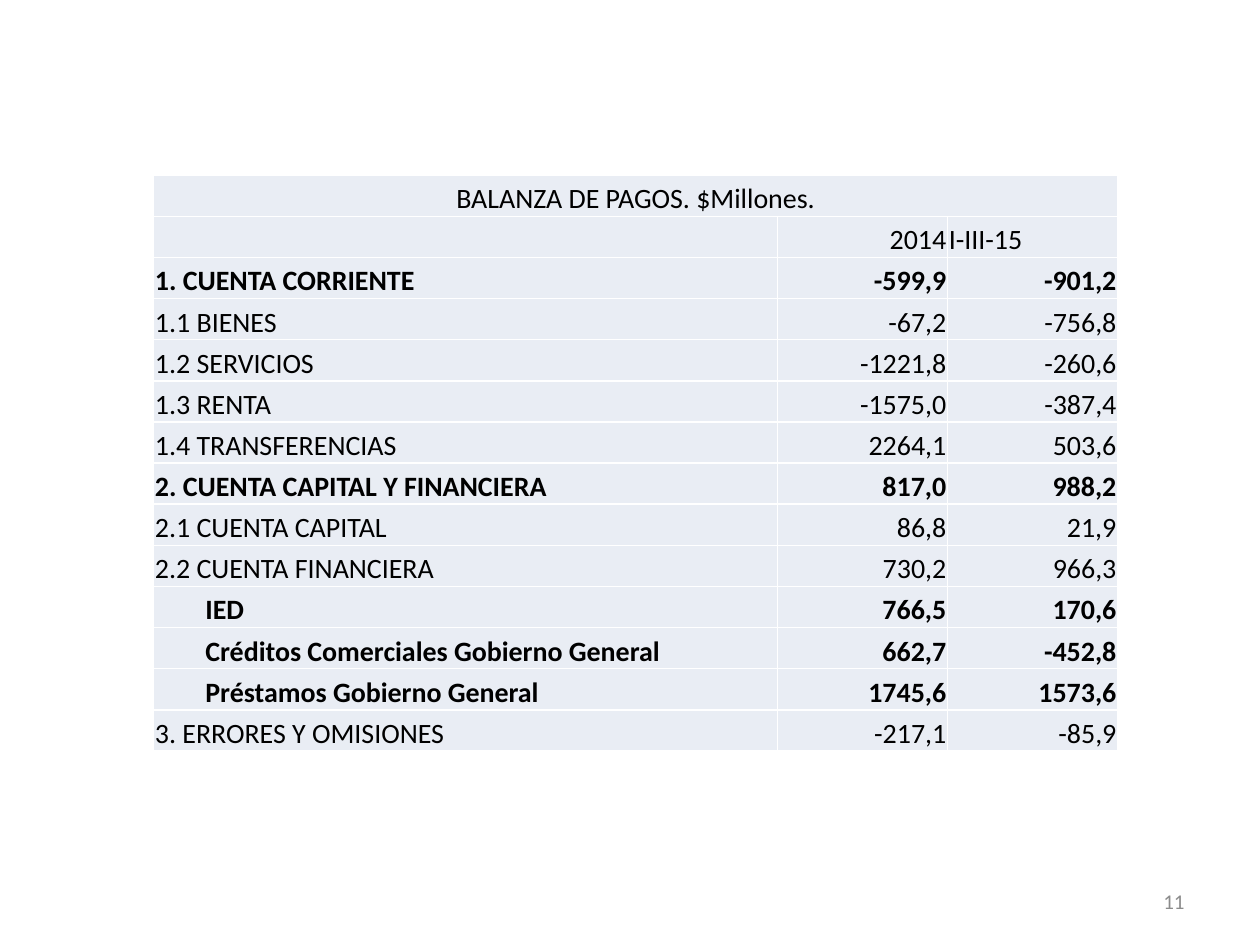
from dataclasses import dataclass

from lxml.etree import SubElement
from pptx import Presentation
from pptx.dml.color import RGBColor
from pptx.enum.text import MSO_ANCHOR, PP_ALIGN
from pptx.oxml.ns import qn
from pptx.util import Inches, Pt

SLIDE_WIDTH, SLIDE_HEIGHT = Inches(10), Inches(7.5)
BLACK = RGBColor(0x00, 0x00, 0x00)
WHITE = RGBColor(0xFF, 0xFF, 0xFF)
GREY = RGBColor(0x8C, 0x8C, 0x8C)
PALE_BLUE = RGBColor(0xE9, 0xED, 0xF4)
FONT = "Calibri"
COLUMN_WIDTHS = (4.95, 1.35, 1.35)
TABLE_HEIGHT = 4.57
CELL_MARGIN = 0.01
INDENT = 0.4


@dataclass(frozen=True)
class Entry:
    label: str
    year_2014: str
    quarters_2015: str
    bold: bool = False
    indented: bool = False


TITLE = "BALANZA DE PAGOS. $Millones."
HEADER = Entry("", "2014", "I-III-15")
ENTRIES = (
    Entry("1. CUENTA CORRIENTE", "-599,9", "-901,2", bold=True),
    Entry("1.1 BIENES", "-67,2", "-756,8"),
    Entry("1.2 SERVICIOS", "-1221,8", "-260,6"),
    Entry("1.3 RENTA", "-1575,0", "-387,4"),
    Entry("1.4 TRANSFERENCIAS", "2264,1", "503,6"),
    Entry("2. CUENTA CAPITAL Y FINANCIERA", "817,0", "988,2", bold=True),
    Entry("2.1 CUENTA CAPITAL", "86,8", "21,9"),
    Entry("2.2 CUENTA FINANCIERA", "730,2", "966,3"),
    Entry("IED", "766,5", "170,6", bold=True, indented=True),
    Entry("Créditos Comerciales Gobierno General", "662,7", "-452,8", bold=True, indented=True),
    Entry("Préstamos Gobierno General", "1745,6", "1573,6", bold=True, indented=True),
    Entry("3. ERRORES Y OMISIONES", "-217,1", "-85,9"),
)


def write(text_frame, text: str, size: int, color: RGBColor, align: PP_ALIGN, bold: bool = False) -> None:
    paragraph = text_frame.paragraphs[0]
    paragraph.alignment = align
    paragraph.font.size = Pt(size)
    if text:
        run = paragraph.add_run()
        run.text = text
        run.font.name = FONT
        run.font.size = Pt(size)
        run.font.bold = bold
        run.font.color.rgb = color


def style_cell(cell) -> None:
    """Set the margins, the white borders and the fill."""
    cell.vertical_anchor = MSO_ANCHOR.BOTTOM
    cell.margin_left = cell.margin_right = cell.margin_top = Inches(CELL_MARGIN)
    cell.margin_bottom = 0
    properties = cell._tc.get_or_add_tcPr()
    for side in ("a:lnL", "a:lnR", "a:lnT", "a:lnB"):
        line = SubElement(properties, qn(side), w=str(Pt(1)))
        SubElement(SubElement(line, qn("a:solidFill")), qn("a:srgbClr"), val=str(WHITE))
    cell.fill.solid()
    cell.fill.fore_color.rgb = PALE_BLUE


def write_entry(table, row: int, entry: Entry, last_align: PP_ALIGN = PP_ALIGN.RIGHT) -> None:
    texts = (entry.label, entry.year_2014, entry.quarters_2015)
    aligns = (PP_ALIGN.LEFT, PP_ALIGN.RIGHT, last_align)
    for column, (text, align) in enumerate(zip(texts, aligns)):
        write(table.cell(row, column).text_frame, text, 16, BLACK, align, entry.bold)
    if entry.indented:
        table.cell(row, 0).margin_left = Inches(CELL_MARGIN + INDENT)


def add_balance_table(slide) -> None:
    row_count = len(ENTRIES) + 2
    table = slide.shapes.add_table(
        row_count, len(COLUMN_WIDTHS), Inches(1.22), Inches(1.39),
        Inches(sum(COLUMN_WIDTHS)), Inches(TABLE_HEIGHT),
    ).table
    table.first_row = table.horz_banding = False
    for column, width in zip(table.columns, COLUMN_WIDTHS):
        column.width = Inches(width)
    for row in table.rows:
        row.height = Inches(TABLE_HEIGHT / row_count)
    for cell in table.iter_cells():
        style_cell(cell)
    title_cell = table.cell(0, 0)
    title_cell.merge(table.cell(0, len(COLUMN_WIDTHS) - 1))
    write(title_cell.text_frame, TITLE, 16, BLACK, PP_ALIGN.CENTER)
    write_entry(table, 1, HEADER, last_align=PP_ALIGN.LEFT)
    for row, entry in enumerate(ENTRIES, start=2):
        write_entry(table, row, entry)


def add_page_number(slide, number: str) -> None:
    text_box = slide.shapes.add_textbox(Inches(7.17), Inches(6.95), Inches(2.33), Inches(0.4))
    text_frame = text_box.text_frame
    text_frame.word_wrap = True
    text_frame.vertical_anchor = MSO_ANCHOR.MIDDLE
    write(text_frame, number, 12, GREY, PP_ALIGN.RIGHT)


def main() -> None:
    presentation = Presentation()
    presentation.slide_width, presentation.slide_height = SLIDE_WIDTH, SLIDE_HEIGHT
    slide = presentation.slides.add_slide(presentation.slide_layouts[6])
    add_balance_table(slide)
    add_page_number(slide, "11")
    presentation.save("out.pptx")


if __name__ == "__main__":
    main()
